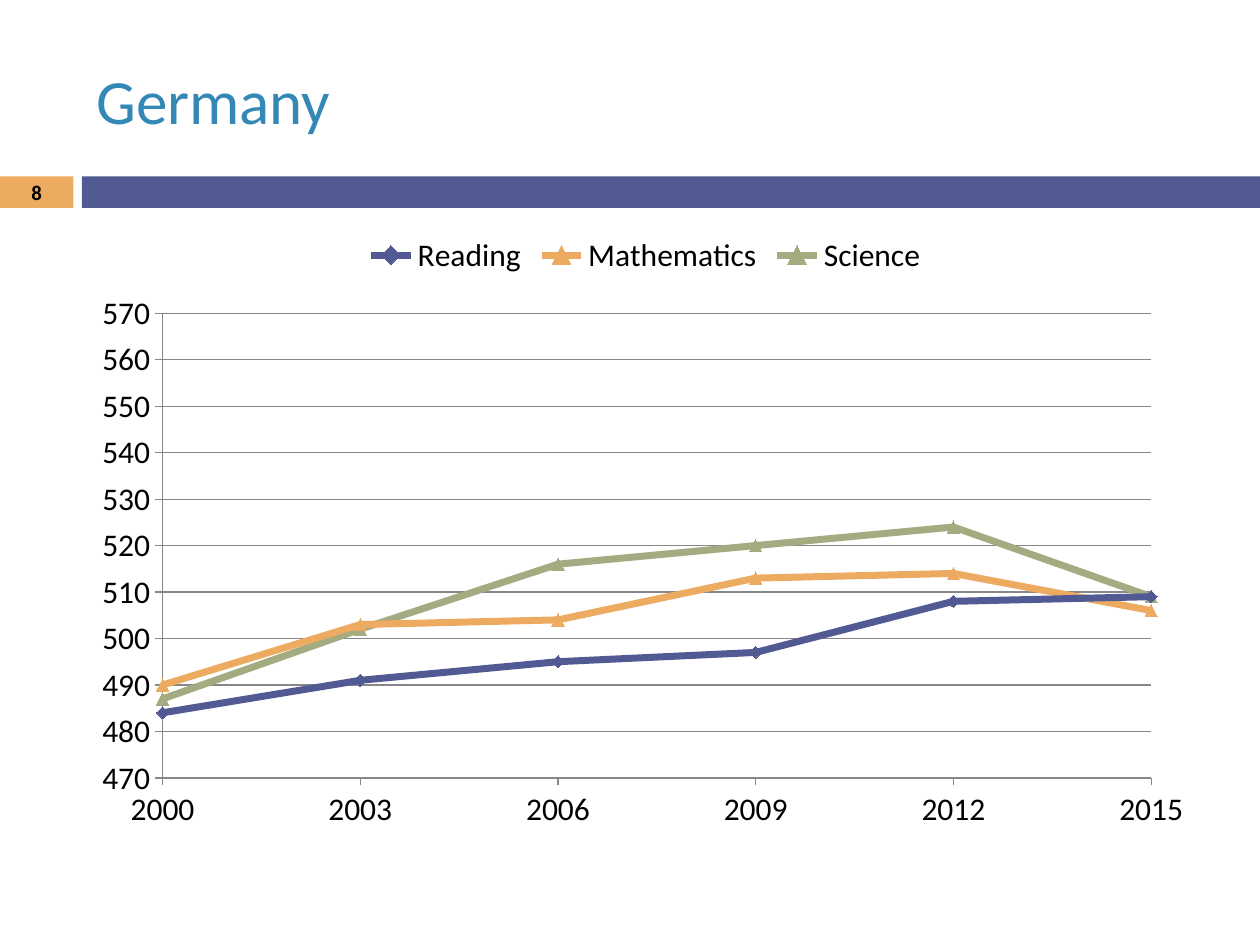
from lxml.etree import SubElement
from pptx import Presentation
from pptx.chart.data import XyChartData
from pptx.dml.color import RGBColor
from pptx.enum.chart import XL_CHART_TYPE as ChartType
from pptx.enum.chart import XL_LEGEND_POSITION as LegendPosition
from pptx.enum.chart import XL_MARKER_STYLE as Marker
from pptx.enum.chart import XL_TICK_MARK as TickMark
from pptx.enum.shapes import MSO_SHAPE as Shape
from pptx.enum.text import MSO_ANCHOR as Anchor
from pptx.enum.text import PP_ALIGN as Align
from pptx.oxml.ns import qn
from pptx.util import Pt

COLORS = {
    "reading": "525A93",
    "mathematics": "EDAA61",
    "science": "A5AB81",
    "title": "3488B6",
    "text": "000000",
    "axis": "878787",
}
FONT = "Calibri"
YEARS = range(2000, 2016, 3)
SCORES = {
    "Reading": (484, 491, 495, 497, 508, 509),
    "Mathematics": (490, 503, 504, 513, 514, 506),
    "Science": (487, 502, 516, 520, 524, 509),
}
MARKERS = (Marker.DIAMOND, Marker.TRIANGLE, Marker.TRIANGLE)
BAND_TOP, BAND_HEIGHT, NUMBER_WIDTH = 100.8, 18, 42
CONTENT_LEFT, CONTENT_WIDTH = 48, 642


def color(name):
    return RGBColor.from_string(COLORS[name])


def format_font(font, size, color_name, bold=False):
    for key, value in {"name": FONT, "size": Pt(size), "bold": bold}.items():
        setattr(font, key, value)
    font.color.rgb = color(color_name)


presentation = Presentation()
presentation.slide_width, presentation.slide_height = Pt(720), Pt(540)
slide = presentation.slides.add_slide(presentation.slide_layouts[5])

# Coloured band with the slide number
bands = ((0, NUMBER_WIDTH, "mathematics"), (46.8, 673.2, "reading"))
for left, width, fill in bands:
    band = slide.shapes.add_shape(
        Shape.RECTANGLE, Pt(left), Pt(BAND_TOP), Pt(width), Pt(BAND_HEIGHT))
    band.shadow.inherit = False
    band.fill.solid()
    band.fill.fore_color.rgb = color(fill)
    band.line.fill.background()

number_box = slide.shapes.add_textbox(
    Pt(0), Pt(100), Pt(NUMBER_WIDTH), Pt(19.5))
number_frame = number_box.text_frame
for key, value in {"word_wrap": True, "vertical_anchor": Anchor.MIDDLE,
                   "margin_top": 0, "margin_bottom": 0}.items():
    setattr(number_frame, key, value)
paragraph = number_frame.paragraphs[0]
paragraph.text = "8"
paragraph.alignment = Align.CENTER
format_font(paragraph.font, 11.9, "text", bold=True)

# Title
title = slide.shapes.title
for key, value in {"left": CONTENT_LEFT, "top": 18,
                   "width": CONTENT_WIDTH, "height": 78}.items():
    setattr(title, key, Pt(value))
title.text_frame.text = "Germany"
title.text_frame.vertical_anchor = Anchor.MIDDLE
paragraph = title.text_frame.paragraphs[0]
paragraph.alignment = Align.LEFT
format_font(paragraph.font, 36, "title")

# Scores by year
chart_data = XyChartData()
for subject, scores in SCORES.items():
    series_data = chart_data.add_series(subject)
    for year, score in zip(YEARS, scores):
        series_data.add_data_point(year, score)
chart = slide.shapes.add_chart(
    ChartType.XY_SCATTER_LINES, Pt(CONTENT_LEFT), Pt(126),
    Pt(CONTENT_WIDTH), Pt(354), chart_data).chart
chart.has_title = False
format_font(chart.font, 18, "text")
chart.has_legend = True
chart.legend.position = LegendPosition.TOP
chart.legend.include_in_layout = False

plot = chart.plots[0]
plot.vary_by_categories = False
for series, marker in zip(plot.series, MARKERS):
    series_color = color(series.name.lower())
    series.smooth = False
    series.format.line.width = Pt(4)
    series.format.line.color.rgb = series_color
    series.marker.style = marker
    series.marker.size = 7
    for part in (series.marker.format.fill, series.marker.format.line.fill):
        part.solid()
        part.fore_color.rgb = series_color

axes = ((chart.category_axis, 2000, 2015, 3, False),
        (chart.value_axis, 470, 570, 10, True))
for axis, low, high, step, gridlines in axes:
    for key, value in {"minimum_scale": low, "maximum_scale": high,
                       "major_unit": step, "has_major_gridlines": gridlines,
                       "major_tick_mark": TickMark.OUTSIDE,
                       "minor_tick_mark": TickMark.NONE}.items():
        setattr(axis, key, value)
    axis.tick_labels.number_format = "General"
    axis.tick_labels.number_format_is_linked = False
    axis.format.line.color.rgb = color("axis")
    axis.format.line.width = Pt(0.75)
gridline = chart.value_axis.major_gridlines.format.line
gridline.color.rgb = color("axis")
gridline.width = Pt(0.75)

# Fixed plot area, as fractions of the chart
plot_area = plot._element.getparent()
for old_layout in plot_area.findall(qn("c:layout")):
    plot_area.remove(old_layout)
layout = SubElement(plot_area, qn("c:layout"))
plot_area.insert(0, layout)
manual = SubElement(layout, qn("c:manualLayout"))
for tag, value in (("layoutTarget", "inner"), ("xMode", "edge"),
                   ("yMode", "edge"), ("x", 0.07), ("y", 0.15),
                   ("w", 0.88), ("h", 0.75)):
    SubElement(manual, qn(f"c:{tag}")).set("val", str(value))

presentation.save("out.pptx")
